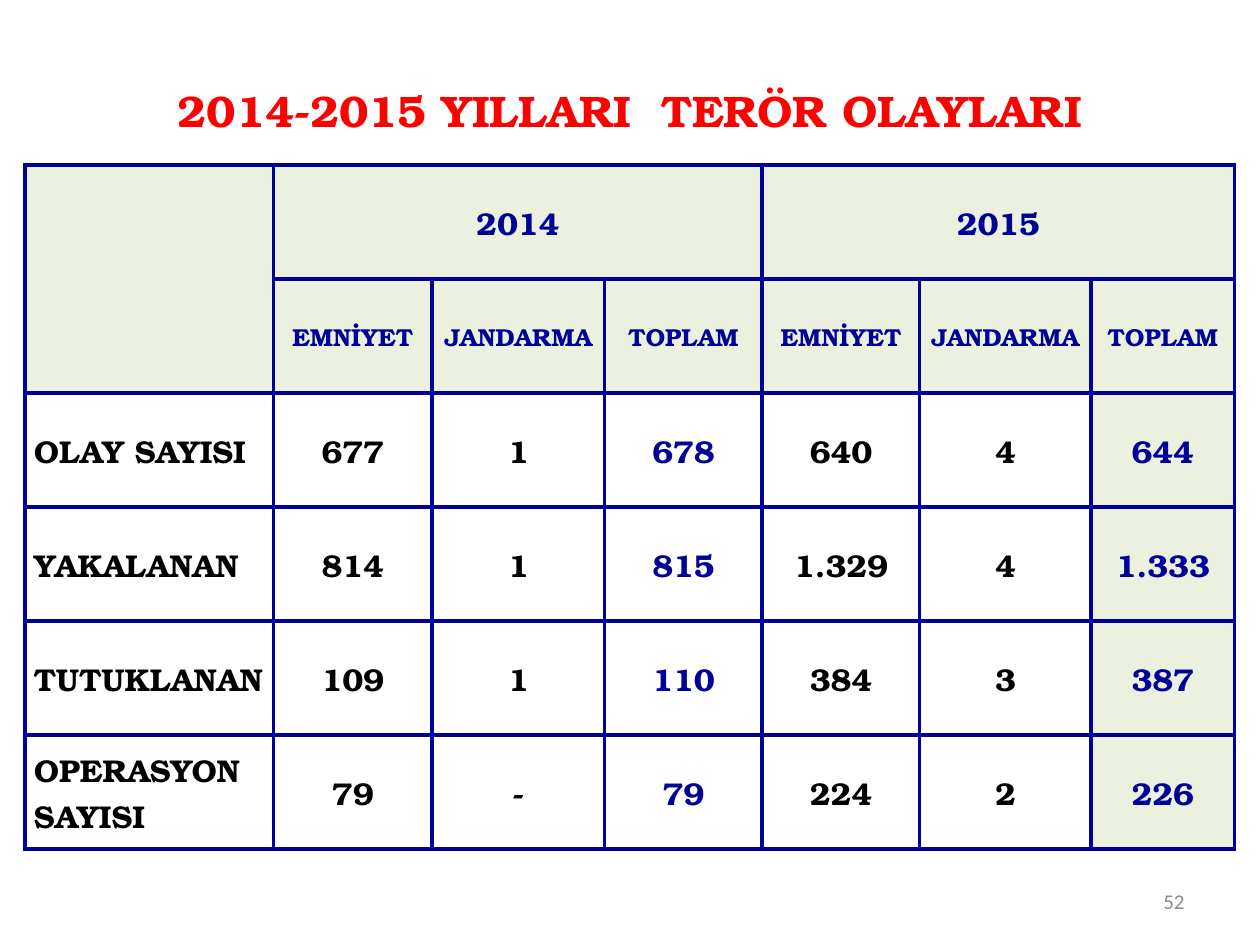
from lxml.etree import SubElement
from pptx import Presentation
from pptx.dml.color import RGBColor
from pptx.enum.text import MSO_ANCHOR, PP_ALIGN
from pptx.oxml.ns import qn
from pptx.util import Inches, Pt

NAVY, BLACK, RED, GREY = "000099", "000000", "FF0000", "8C8C8C"
GREEN, WHITE = "EBF1DE", "FFFFFF"
SERIF, SANS = "TeX Gyre Bonum", "Calibri"

COLS = [1.97, 1.26, 1.37, 1.25, 1.25, 1.36, 1.14]
YEARS = ["2014", "2015"]
FORCES = ["EMNİYET", "JANDARMA", "TOPLAM"]
ROWS = [
    ["OLAY SAYISI", "677", "1", "678", "640", "4", "644"],
    ["YAKALANAN", "814", "1", "815", "1.329", "4", "1.333"],
    ["TUTUKLANAN", "109", "1", "110", "384", "3", "387"],
    ["OPERASYON SAYISI", "79", "-", "79", "224", "2", "226"],
]


def color(code):
    return RGBColor.from_string(code)


def write(para, text, size, ink, font=SERIF, bold=True, align=PP_ALIGN.CENTER):
    para.alignment = align
    run = para.add_run()
    run.text = text
    run.font.name = font
    run.font.size = Pt(size)
    run.font.bold = bold
    run.font.color.rgb = color(ink)


def add_box(slide, left, top, width, height):
    """Add an empty, vertically centred text box and return its paragraph."""
    box = slide.shapes.add_textbox(Inches(left), Inches(top), Inches(width), Inches(height))
    frame = box.text_frame
    frame.word_wrap = True
    frame.vertical_anchor = MSO_ANCHOR.MIDDLE
    return frame.paragraphs[0]


def add_title(slide, *box):
    para = add_box(slide, *box)
    write(para, "2014-2015 YILLARI  TERÖR OLAYLARI", 25.2, RED)
    para.add_line_break()


def add_number(slide, *box):
    write(add_box(slide, *box), "52", 12, GREY, SANS, False, PP_ALIGN.RIGHT)


def set_borders(cell):
    props = cell._tc.get_or_add_tcPr()
    for place, side in enumerate(("lnL", "lnR", "lnT", "lnB")):
        line = SubElement(props, qn(f"a:{side}"), w=str(Pt(2.25)))
        fill = SubElement(line, qn("a:solidFill"))
        SubElement(fill, qn("a:srgbClr"), val=NAVY)
        props.insert(place, line)


def style_cell(cell, fill, tight=False):
    cell.vertical_anchor = MSO_ANCHOR.MIDDLE
    cell.margin_left = cell.margin_right = Inches(0.01 if tight else 0.07)
    cell.margin_top = Inches(0.01 if tight else 0)
    cell.margin_bottom = 0
    if fill:
        cell.fill.solid()
        cell.fill.fore_color.rgb = color(fill)
    else:
        cell.fill.background()
    set_borders(cell)


def fill_cell(cell, text, size, ink, align=PP_ALIGN.CENTER, after=6):
    para = cell.text_frame.paragraphs[0]
    para.space_after = Pt(after)
    write(para, text, size, ink, align=align)


def add_head(table):
    for row in range(2):
        for col in range(len(COLS)):
            style_cell(table.cell(row, col), GREEN)
    table.cell(0, 0).merge(table.cell(1, 0))
    span = len(FORCES)
    for start, year in zip((1, 1 + span), YEARS):
        table.cell(0, start).merge(table.cell(0, start + span - 1))
        fill_cell(table.cell(0, start), year, 18, NAVY)
        for col, force in enumerate(FORCES, start):
            fill_cell(table.cell(1, col), force, 14, NAVY)


def add_body(table):
    last = len(COLS) - 1
    for row, values in enumerate(ROWS, 2):
        for col, value in enumerate(values):
            cell = table.cell(row, col)
            total = col in (3, last)
            fill = None if col == 0 else GREEN if col == last else WHITE
            style_cell(cell, fill, tight=col == last)
            align = PP_ALIGN.CENTER if col else PP_ALIGN.LEFT
            after = 0 if row == 2 and col and not total else 6
            fill_cell(cell, value, 18, NAVY if total else BLACK, align, after)


def add_grid(slide, left, top, width, height):
    count = len(ROWS) + 2
    frame = slide.shapes.add_table(count, len(COLS), Inches(left), Inches(top),
                                   Inches(width), Inches(height))
    table = frame.table
    table.first_row = table.horz_banding = False
    for col, size in zip(table.columns, COLS):
        col.width = Inches(size)
    for row in table.rows:
        row.height = Inches(height / count)
    add_head(table)
    add_body(table)


def main():
    deck = Presentation()
    deck.slide_width, deck.slide_height = Inches(10), Inches(7.5)
    slide = deck.slides.add_slide(deck.slide_layouts[6])
    add_number(slide, 7.17, 6.95, 2.33, 0.4)
    add_title(slide, 1.14, 0.6, 7.72, 0.85)
    add_grid(slide, 0.2, 1.31, sum(COLS), 5.43)
    deck.save("out.pptx")


if __name__ == "__main__":
    main()
